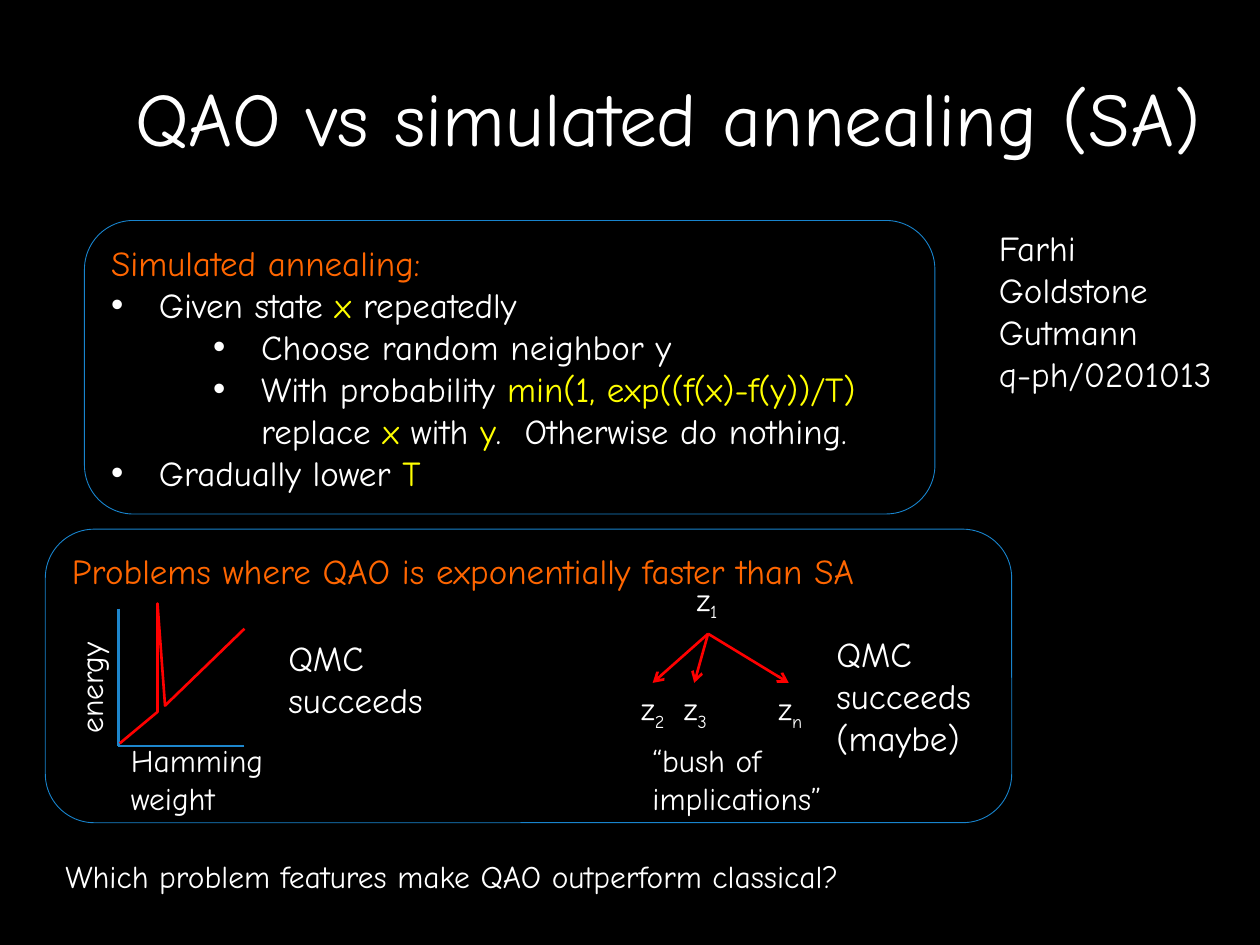
from pptx import Presentation
from pptx.dml.color import RGBColor
from pptx.enum.shapes import MSO_CONNECTOR as CONN, MSO_SHAPE as SHAPE
from pptx.enum.text import MSO_ANCHOR as ANCHOR, PP_ALIGN as ALIGN
from pptx.oxml.ns import qn
from pptx.util import Inches, Pt
from lxml.etree import SubElement

BLACK = RGBColor(0x00, 0x00, 0x00)
WHITE = RGBColor(0xFF, 0xFF, 0xFF)
ORANGE = RGBColor(0xFF, 0x66, 0x00)
YELLOW = RGBColor(0xFF, 0xFF, 0x00)
RED = RGBColor(0xFF, 0x00, 0x00)
BLUE = RGBColor(0x1D, 0x86, 0xCD)
PANEL_BLUE = RGBColor(0x18, 0x84, 0xCD)
FONT = "Comic Neue"


class Deck:
    def __init__(self, prs):
        self.slide = prs.slides.add_slide(prs.slide_layouts[6])
        self.shapes = self.slide.shapes
        fill = self.slide.background.fill
        fill.solid()
        fill.fore_color.rgb = BLACK

    def style(self, p, size, color):
        for r in p.runs:
            r.font.name = FONT
            r.font.size = Pt(size)
            r.font.color.rgb = color

    def text(self, text, x, y, w, h, size=18, wrap=False):
        sp = self.shapes.add_textbox(Inches(x), Inches(y), Inches(w), Inches(h))
        tf = sp.text_frame
        tf.word_wrap = wrap
        tf.text = text
        for p in tf.paragraphs:
            self.style(p, size, WHITE)
        return sp

    def title(self, text, x, y, w, h):
        tf = self.text(text, x, y, w, h, 43.2, True).text_frame
        tf.vertical_anchor = ANCHOR.MIDDLE
        tf.paragraphs[0].alignment = ALIGN.CENTER

    def panel(self, heading, x, y, w, h, anchor):
        sp = self.shapes.add_shape(SHAPE.ROUNDED_RECTANGLE, Inches(x), Inches(y), Inches(w), Inches(h))
        sp.shadow.inherit = False
        sp.fill.background()
        sp.line.color.rgb = PANEL_BLUE
        sp.line.width = Pt(0.5)
        tf = sp.text_frame
        tf.word_wrap = True
        tf.vertical_anchor = anchor
        tf.text = heading
        p = tf.paragraphs[0]
        p.alignment = ALIGN.LEFT
        self.style(p, 20, ORANGE)
        return tf

    def bullet(self, tf, level, parts):
        p = tf.add_paragraph()
        p.alignment = ALIGN.LEFT
        p.level = level
        pPr = p._p.get_or_add_pPr()
        pPr.set("marL", str(Inches(1.19 if level else 0.38)))
        pPr.set("indent", str(Inches(-0.38)))
        SubElement(pPr, qn("a:buFont")).set("typeface", "Arial")
        SubElement(pPr, qn("a:buChar")).set("char", "•")
        for part in parts:
            if part == "\n":
                p.add_line_break()
            else:
                p.add_run().text = part.strip("*")
        self.style(p, 20, WHITE)
        texts = [part for part in parts if part != "\n"]
        for r, part in zip(p.runs, texts):
            if part.startswith("*"):
                r.font.color.rgb = YELLOW

    def line(self, start, end, color, arrow=False):
        c = self.shapes.add_connector(CONN.STRAIGHT, *map(Inches, start + end))
        c.line.color.rgb = color
        c.line.width = Pt(1.5)
        SubElement(c._element.spPr, qn("a:effectLst"))
        if arrow:
            SubElement(c.line._get_or_add_ln(), qn("a:tailEnd")).set("type", "arrow")

    def curve(self, points, color):
        points = [(Inches(x), Inches(y)) for x, y in points]
        fb = self.shapes.build_freeform(*points[0])
        fb.add_line_segments(points[1:], close=False)
        sp = fb.convert_to_shape()
        sp.shadow.inherit = False
        sp.fill.background()
        sp.line.color.rgb = color
        sp.line.width = Pt(1.5)

    def variable(self, index, x, y):
        p = self.text("z", x, y, 0.5, 0.48).text_frame.paragraphs[0]
        r = p.add_run()
        r.text = index
        self.style(p, 18, WHITE)
        r._r.get_or_add_rPr().set("baseline", "-25000")


def main():
    prs = Presentation()
    prs.slide_width, prs.slide_height = Inches(10), Inches(7.5)
    s = Deck(prs)
    s.title("QAO vs simulated annealing (SA)", 0.59, 0.14, 9.42, 1.56)

    tf = s.panel("Simulated annealing:", 0.67, 1.75, 6.75, 2.33, ANCHOR.MIDDLE)
    steps = [
        (0, ["Given state ", "*x", " repeatedly"]),
        (1, ["Choose random neighbor y"]),
        (1, ["With probability ", "*min(1, exp((f(x)-f(y))/T)", "\n", "replace ", "*x",
             " with ", "*y", ".  Otherwise do nothing."]),
        (0, ["Gradually lower ", "*T"]),
    ]
    for level, parts in steps:
        s.bullet(tf, level, parts)

    s.panel("Problems where QAO is exponentially faster than SA", 0.36, 4.2, 7.67, 2.33, ANCHOR.TOP)

    origin = (0.94, 5.92)
    s.line((0.94, 4.83), origin, BLUE)
    s.line((1.94, 5.92), origin, BLUE)
    s.curve([(0.95, 5.9), (1.25, 5.65), (1.25, 4.79), (1.31, 5.6), (1.94, 4.99)], RED)
    s.text("Hamming\nweight", 0.94, 5.83, 1.4, 0.75)
    s.text("energy", 0.19, 5.17, 1.08, 0.42).rotation = 270

    root = (5.62, 5.03)
    s.variable("1", 5.43, 4.55)
    for index, x, tip in [("2", 4.99, 5.18), ("3", 5.33, 5.51), ("n", 6.08, 6.26)]:
        s.variable(index, x, 5.42)
        s.line(root, (tip, 5.42), RED, arrow=True)
    s.text("“bush of\nimplications”", 5.08, 5.83, 1.7, 0.75)

    s.text("QMC\nsucceeds", 2.19, 5, 1.4, 0.77, 20)
    s.text("QMC\nsucceeds\n(maybe)", 6.54, 4.97, 1.4, 1.1, 20)
    s.text("Which problem features make QAO outperform classical?", 0.42, 6.75, 8.85, 0.5)
    s.text("Farhi\nGoldstone\nGutmann\nq-ph/0201013", 7.83, 1.75, 1.93, 1.45, 20)
    prs.save("out.pptx")


if __name__ == "__main__":
    main()
